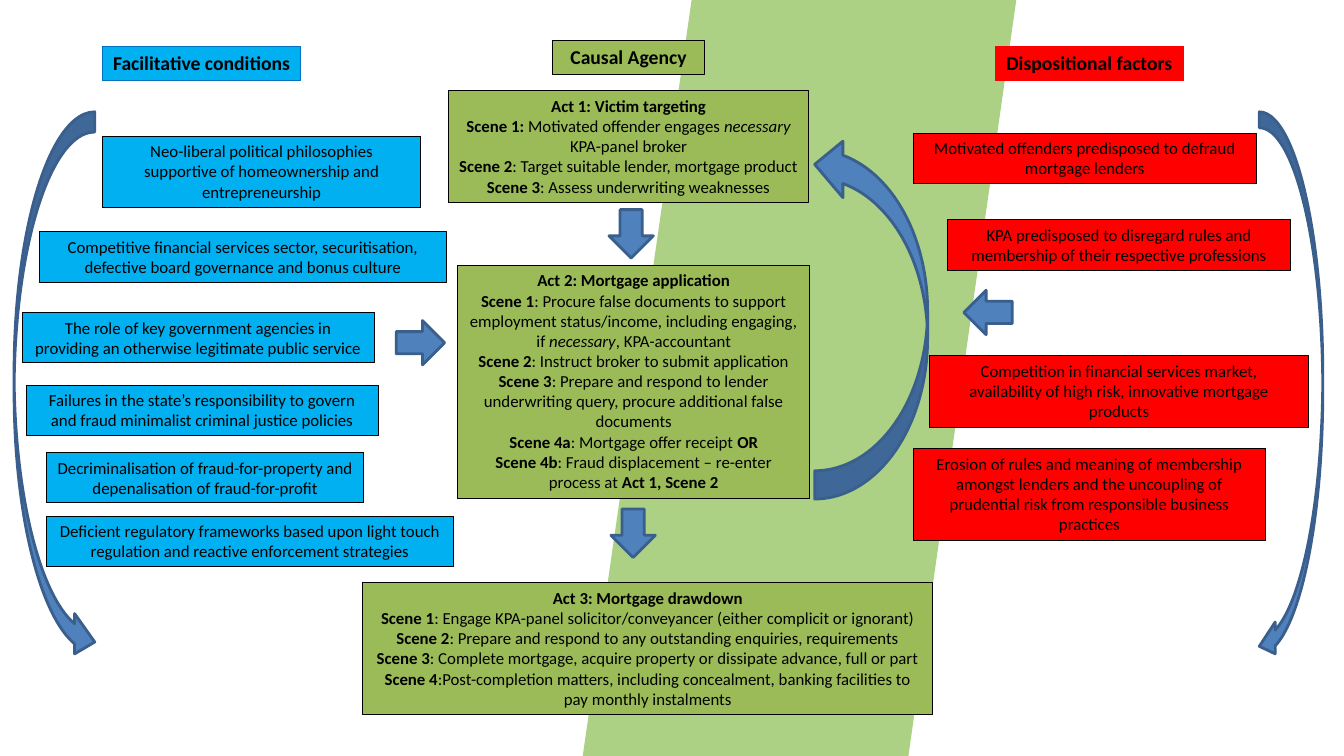
import pptx
import pptx.dml.color
import pptx.enum.shapes
import pptx.enum.text
import pptx.util

Inches, Pt = pptx.util.Inches, pptx.util.Pt
SHAPE = pptx.enum.shapes.MSO_SHAPE

BLACK, BLUE, GREEN, RED = "000000", "00B0F0", "9BBB59", "FF0000"
BAND, ARROW, ARROW_LINE = "ACD084", "4F81BD", "3A5F8C"

BAND_POINTS = [(10.08, 0), (6.86, 0), (5.78, 7.5), (9.01, 7.5)]

# text, box (left, top, width, height), fill, line, wrap
HEADINGS = [
    ("Causal Agency", (5.48, 0.4, 1.51, 0.34), GREEN, BLACK, True),
    ("Dispositional factors", (9.87, 0.46, 1.87, 0.34), RED, RED, False),
    ("Facilitative conditions", (1.02, 0.46, 1.96, 0.34), BLUE, "0070C0", True),
]

# Asterisks enclose bold words, underscores enclose italic words
ACTS = [
    ((4.45, 0.9, 3.57, 1.11), [
        "*Act 1: Victim targeting*",
        "*Scene 1:* Motivated offender engages _necessary_ KPA-panel broker",
        "*Scene 2*: Target suitable lender, mortgage product",
        "*Scene 3*: Assess underwriting weaknesses",
    ]),
    ((4.54, 2.63, 3.49, 2.32), [
        "*Act 2: Mortgage application*",
        "*Scene 1*: Procure false documents to support employment status/income, "
        "including engaging, if _necessary_, KPA-accountant",
        "*Scene 2*: Instruct broker to submit application",
        "*Scene 3*: Prepare and respond to lender underwriting query, "
        "procure additional false documents",
        "*Scene 4a*: Mortgage offer receipt *OR*",
        "*Scene 4b*: Fraud displacement – re-enter process at *Act 1, Scene 2*",
    ]),
    ((3.6, 5.78, 5.65, 1.31), [
        "*Act 3: Mortgage drawdown*",
        "*Scene 1*: Engage KPA-panel solicitor/conveyancer (either complicit or ignorant)",
        "*Scene 2*: Prepare and respond to any outstanding enquiries, requirements",
        "*Scene 3*: Complete mortgage, acquire property or dissipate advance, full or part",
        "*Scene 4*:Post-completion matters, including concealment, "
        "banking facilities to pay monthly instalments",
    ]),
]

DISPOSITIONAL = [
    ((9.06, 1.32, 3.4, 0.5),
     ["Motivated offenders predisposed to defraud mortgage lenders"]),
    ((9.4, 2.18, 3.4, 0.5),
     ["KPA predisposed to disregard rules and membership of their respective professions"]),
    ((9.22, 3.53, 3.76, 0.71),
     ["Competition in financial services market,",
      "availability of high risk, innovative mortgage products"]),
    ((9.06, 4.45, 3.49, 0.91),
     ["Erosion of rules and meaning of membership amongst lenders and the uncoupling "
      "of prudential risk from responsible business practices"]),
]

FACILITATIVE = [
    ((1.02, 1.35, 3.15, 0.71),
     ["Neo-liberal political philosophies supportive of homeownership and entrepreneurship"]),
    ((0.39, 2.3, 4.04, 0.5),
     ["Competitive financial services sector, securitisation, "
      "defective board governance and bonus culture"]),
    ((0.22, 3.1, 3.49, 0.5),
     ["The role of key government agencies in providing an otherwise legitimate public service"]),
    ((0.26, 3.82, 3.49, 0.5),
     ["Failures in the state’s responsibility to govern "
      "and fraud minimalist criminal justice policies"]),
    ((0.46, 4.49, 3.15, 0.5),
     ["Decriminalisation of fraud-for-property and", "depenalisation of fraud-for-profit"]),
    ((0.46, 5.12, 4.04, 0.5),
     ["Deficient regulatory frameworks based upon light touch regulation "
      "and reactive enforcement strategies"]),
]

CURVED_ARROWS = [
    (SHAPE.CURVED_UP_ARROW, (6.84, 2.59, 3.6, 1.12), 270),
    (SHAPE.CURVED_RIGHT_ARROW, (0.14, 1.11, 0.8, 5.46), 0),
    (SHAPE.CURVED_LEFT_ARROW, (12.49, 1.11, 0.63, 5.46), 0),
]
# left, top, rotation
BLOCK_ARROWS = [(6.04, 2.08, 0), (6.06, 5.05, 0), (3.95, 3.16, 270), (9.58, 2.86, 90)]
BLOCK_SIZE = (0.44, 0.48)


def rgb(color):
    return pptx.dml.color.RGBColor.from_string(color)


def paint(sp, fill, line=None, width=0.75):
    sp.shadow.inherit = False
    sp.fill.solid()
    sp.fill.fore_color.rgb = rgb(fill)
    if line:
        sp.line.color.rgb = rgb(line)
        sp.line.width = Pt(width)
    else:
        sp.line.fill.background()


def add_text(sp, lines, size=12, wrap=True):
    """Write one centred paragraph per line, with * for bold and _ for italic."""
    tf = sp.text_frame
    tf.word_wrap = wrap
    tf.auto_size = pptx.enum.text.MSO_AUTO_SIZE.SHAPE_TO_FIT_TEXT
    tf.vertical_anchor = pptx.enum.text.MSO_ANCHOR.TOP
    for n, line in enumerate(lines):
        p = tf.add_paragraph() if n else tf.paragraphs[0]
        p.alignment = pptx.enum.text.PP_ALIGN.CENTER
        for i, part in enumerate(line.split("*")):
            for j, words in enumerate(part.split("_")):
                if words:
                    r = p.add_run()
                    r.text = words
                    r.font.name = "Calibri"
                    r.font.size = Pt(size)
                    r.font.color.rgb = rgb(BLACK)
                    r.font.bold = i % 2 == 1
                    r.font.italic = j % 2 == 1


def add_box(s, box, lines, fill, line=BLACK, **text_format):
    sp = s.shapes.add_shape(SHAPE.RECTANGLE, *map(Inches, box))
    paint(sp, fill, line)
    add_text(sp, lines, **text_format)


def add_arrow(s, kind, box, rotation):
    sp = s.shapes.add_shape(kind, *map(Inches, box))
    sp.rotation = rotation
    paint(sp, ARROW, ARROW_LINE, 2)


def main():
    prs = pptx.Presentation()
    prs.slide_width, prs.slide_height = Inches(13.33), Inches(7.5)
    s = prs.slides.add_slide(prs.slide_layouts[6])

    points = [(Inches(x), Inches(y)) for x, y in BAND_POINTS]
    band = s.shapes.build_freeform(*points[0])
    band.add_line_segments(points[1:], close=True)
    paint(band.convert_to_shape(), BAND)

    for kind, box, rotation in CURVED_ARROWS:
        add_arrow(s, kind, box, rotation)
    for left, top, rotation in BLOCK_ARROWS:
        add_arrow(s, SHAPE.DOWN_ARROW, (left, top, *BLOCK_SIZE), rotation)

    for text, box, fill, line, wrap in HEADINGS:
        add_box(s, box, [f"*{text}*"], fill, line, size=14, wrap=wrap)
    for boxes, fill in ((ACTS, GREEN), (DISPOSITIONAL, RED), (FACILITATIVE, BLUE)):
        for box, lines in boxes:
            add_box(s, box, lines, fill)

    prs.save("out.pptx")


if __name__ == "__main__":
    main()
